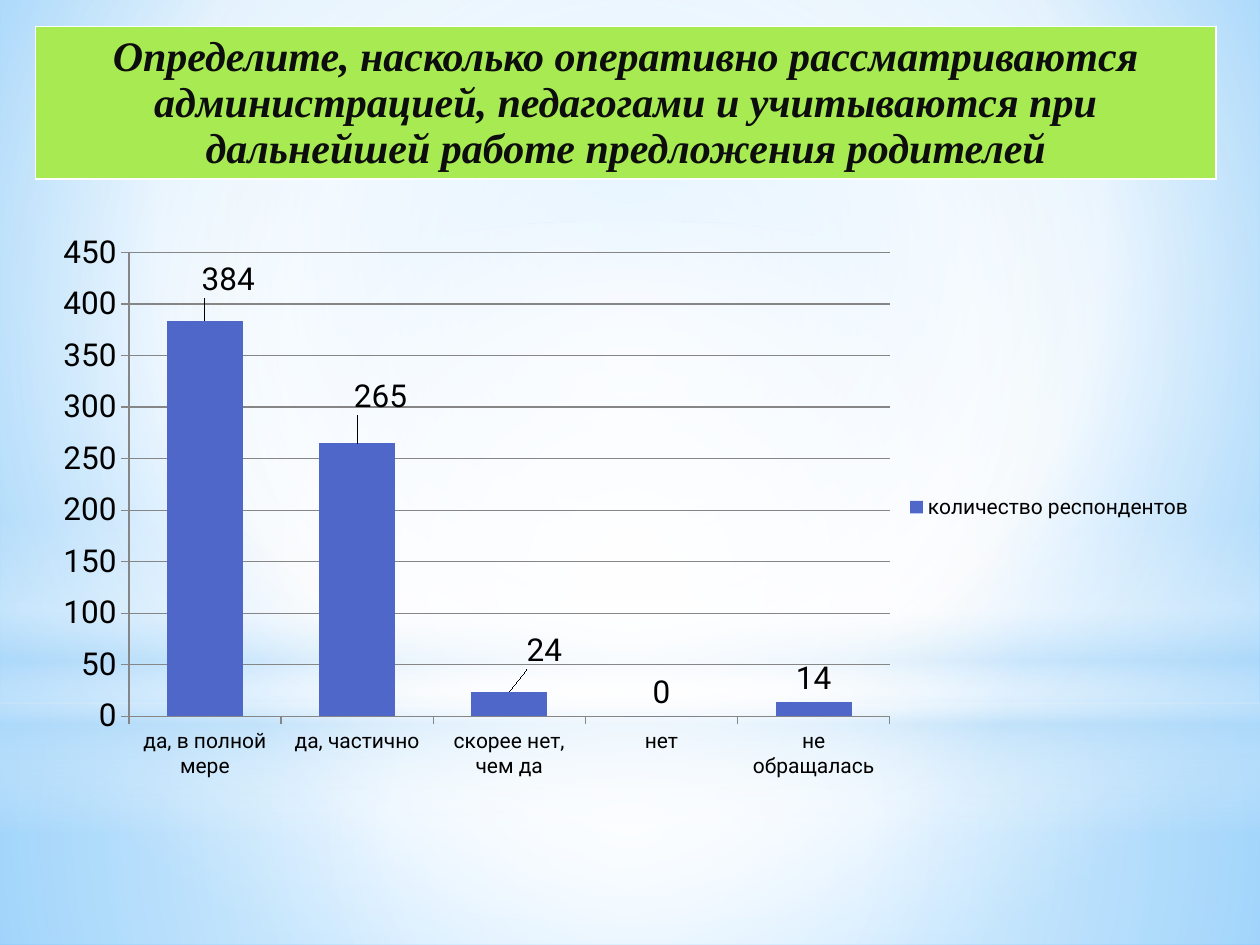
from lxml.etree import SubElement as Sub
from pptx import Presentation
from pptx.chart.data import CategoryChartData as Data
from pptx.dml.color import RGBColor as Rgb
from pptx.enum.chart import XL_CHART_TYPE as Kind, XL_LABEL_POSITION as Pos
from pptx.enum.chart import XL_LEGEND_POSITION as Side, XL_TICK_MARK as Tick
from pptx.enum.shapes import MSO_SHAPE as Shape
from pptx.enum.text import MSO_ANCHOR as Anchor, PP_ALIGN as Align
from pptx.oxml import parse_xml
from pptx.oxml.ns import nsdecls, qn
from pptx.util import Inches, Pt

COLORS = {"white": "FFFFFF", "pale": "B4DCFA", "sky": "9ED5FF", "azure": "5BB9FF",
          "green": "A7EA52", "ink": "0D0D0D", "black": "000000",
          "bar": "4E67C8", "grid": "868686"}
CENTER = (50, 50, 50, 50)


def color(name):
    return Rgb.from_string(COLORS[name])


def shade(fill, root, stops, focus=None):
    """Gradient of (place, colour, opacity) stops: round if focus is given, else downward."""
    fill.gradient()
    old = root.find(".//" + qn("a:gradFill"))
    marks = "".join(
        f'<a:gs pos="{at * 1000}"><a:srgbClr val="{COLORS[name]}">'
        f'<a:alpha val="{alpha * 1000}"/></a:srgbClr></a:gs>' for at, name, alpha in stops)
    if focus:
        sides = " ".join(f'{key}="{val * 1000}"' for key, val in zip("ltrb", focus))
        form = f'<a:path path="circle"><a:fillToRect {sides}/></a:path>'
    else:
        form = '<a:lin ang="5400000" scaled="0"/>'
    new = parse_xml(f'<a:gradFill {nsdecls("a")} rotWithShape="1">'
                    f'<a:gsLst>{marks}</a:gsLst>{form}</a:gradFill>')
    old.getparent().replace(old, new)


def add_glow(slide, kind, box, stops, focus=None):
    glow = slide.shapes.add_shape(kind, *map(Inches, box))
    glow.shadow.inherit = False
    glow.line.fill.background()
    shade(glow.fill, glow._element, stops, focus)


def add_sky(slide):
    shade(slide.background.fill, slide.element,
          [(0, "sky", 100), (60, "white", 100), (100, "azure", 100)], (20, 10, 20, 60))
    add_glow(slide, Shape.RECTANGLE, (0, 5.58, 10, 1.92),
             [(0, "white", 91), (37, "white", 76), (100, "pale", 79)], CENTER)
    add_glow(slide, Shape.RECTANGLE, (0, 0, 10, 5.58),
             [(0, "white", 89), (48, "white", 62), (100, "pale", 79)], CENTER)
    add_glow(slide, Shape.RECTANGLE, (0, 4.12, 10, 2.5),
             [(0, "white", 0), (29, "white", 30), (45, "pale", 40),
              (55, "white", 26), (65, "pale", 60), (100, "white", 0)])
    add_glow(slide, Shape.OVAL, (0, 1.75, 10, 5.58),
             [(0, "white", 100), (56, "white", 0)], CENTER)


def add_banner(slide, box, text):
    cell = slide.shapes.add_table(1, 1, *map(Inches, box)).table.cell(0, 0)
    cell.fill.solid()
    cell.fill.fore_color.rgb = color("green")
    cell.vertical_anchor = Anchor.MIDDLE
    cell.margin_left = cell.margin_right = cell.margin_top = Inches(0.01)
    cell.margin_bottom = 0
    cell.text_frame.text = text
    para = cell.text_frame.paragraphs[0]
    para.alignment = Align.CENTER
    font = para.runs[0].font
    font.name, font.size = "Times New Roman", Pt(24)
    font.bold = font.italic = True
    font.color.rgb = color("ink")


def set_layout(layout, **parts):
    """Manual chart layout, in shares of the chart's size."""
    manual = Sub(layout, qn("c:manualLayout"))
    for key, val in parts.items():
        Sub(manual, qn("c:" + key)).set("val", str(val))


def add_bars(slide, box, name, counts, shifts):
    data = Data()
    data.categories = list(counts)
    data.add_series(name, list(counts.values()))
    chart = slide.shapes.add_chart(Kind.COLUMN_CLUSTERED, *map(Inches, box), data).chart
    chart.has_title = False
    chart.font.name, chart.font.size = "Roboto", Pt(18)
    chart.font.color.rgb = color("black")

    # Legend
    chart.has_legend = True
    chart.legend.position = Side.RIGHT
    chart.legend.include_in_layout = False
    chart.legend.font.size = Pt(12)

    # Axes
    across, up = chart.category_axis, chart.value_axis
    across.tick_labels.font.size = Pt(12)
    up.minimum_scale, up.maximum_scale, up.major_unit = 0, 450, 50
    up.has_major_gridlines = True
    for axis in (across, up):
        axis.major_tick_mark = Tick.OUTSIDE
    for line in (across.format.line, up.format.line, up.major_gridlines.format.line):
        line.color.rgb = color("grid")
        line.width = Pt(0.75)

    # Plot area
    area = chart._chartSpace.find(".//" + qn("c:plotArea"))
    layout = area.find(qn("c:layout"))
    if layout is None:
        layout = area.makeelement(qn("c:layout"))
        area.insert(0, layout)
    set_layout(layout, layoutTarget="inner", xMode="edge", yMode="edge",
               x=0.08, y=0.05, w=0.65, h=0.82)

    # Columns and their labels
    plot = chart.plots[0]
    plot.gap_width = 100
    plot.vary_by_categories = False
    bars = plot.series[0]
    bars.format.fill.solid()
    bars.format.fill.fore_color.rgb = color("bar")
    labels = bars.data_labels
    labels.show_value = True
    labels.position = Pos.OUTSIDE_END
    for num, (right, down) in enumerate(shifts):
        label = bars.points[num].data_label
        label.font.size = Pt(18)
        label.position = Pos.OUTSIDE_END
        node = labels._element.findall(qn("c:dLbl"))[num]
        place = node.makeelement(qn("c:layout"))
        node.insert(1, place)
        set_layout(place, x=right, y=down)


def main():
    deck = Presentation()
    deck.slide_width, deck.slide_height = Inches(10), Inches(7.5)
    slide = deck.slides.add_slide(deck.slide_layouts[6])
    add_sky(slide)
    add_banner(slide, (0.28, 0.21, 9.37, 1.21),
               "Определите, насколько оперативно рассматриваются администрацией, "
               "педагогами и учитываются при дальнейшей работе предложения родителей")
    add_bars(slide, (0.28, 1.78, 9.29, 4.49), "количество респондентов",
             {"да, в полной мере": 384, "да, частично": 265, "скорее нет, чем да": 24,
              "нет": 0, "не обращалась": 14},
             [(0.02, -0.03), (0.02, -0.04), (0.03, -0.03)])
    deck.save("out.pptx")


if __name__ == "__main__":
    main()
